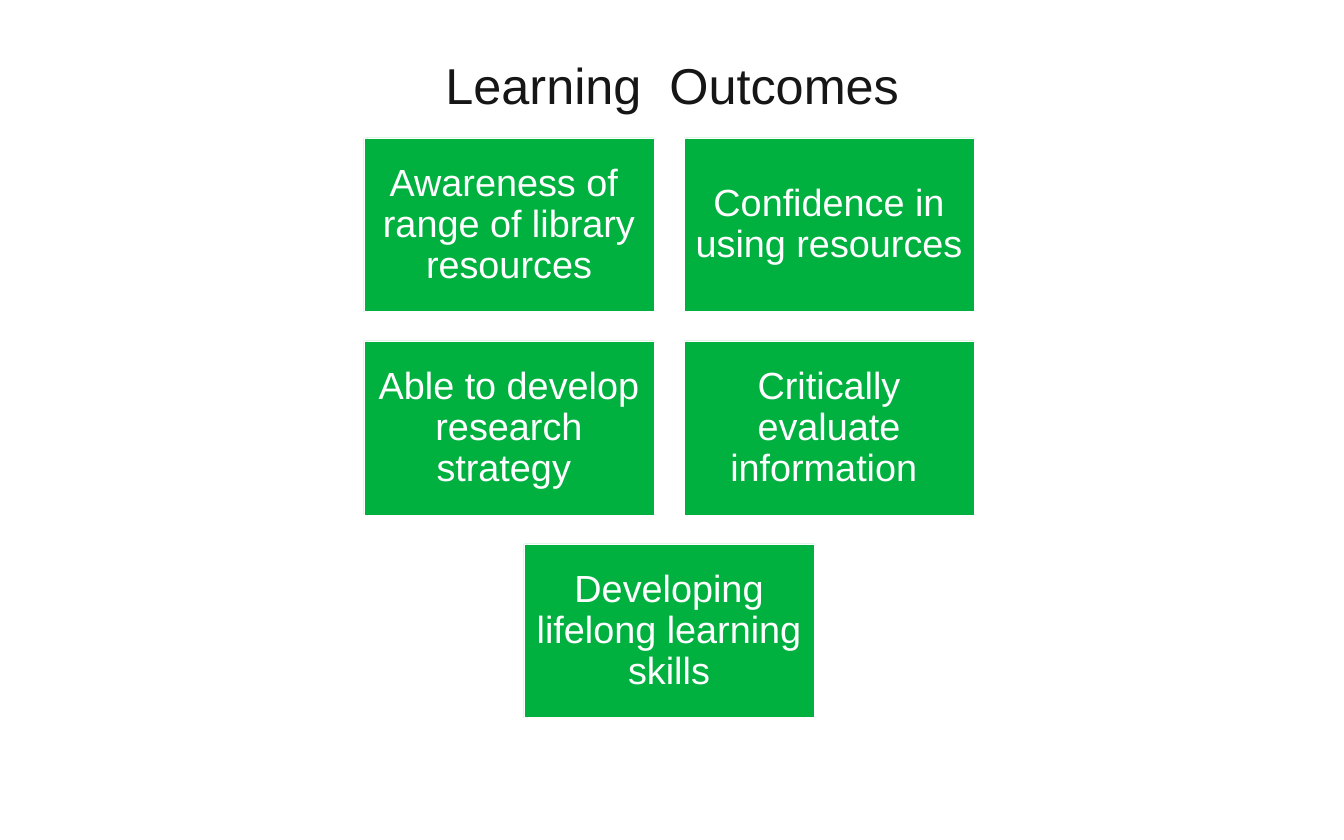
import dataclasses

import pptx
import pptx.dml.color
import pptx.enum.shapes
import pptx.enum.text
import pptx.util

PX = 12095  # EMU per px
FONT = "Arial"
HUES = {"green": "00B140", "white": "FFFFFF", "ink": "171616"}

# Card grid
WIDE, HIGH = 290, 174
LEFT, TOP = 364, 138
STEP_X, STEP_Y = 320, 203
INSET = 11


@dataclasses.dataclass
class Card:
    text: str
    col: float
    row: int


CARDS = [
    Card("Awareness of  range of library resources", 0, 0),
    Card("Confidence in using resources ", 1, 0),
    Card("Able to develop research strategy ", 0, 1),
    Card("Critically evaluate information ", 1, 1),
    Card("Developing lifelong learning skills", 0.5, 2),
]


def px(size: float) -> pptx.util.Emu:
    return pptx.util.Emu(round(size * PX))


def hue(name: str) -> pptx.dml.color.RGBColor:
    return pptx.dml.color.RGBColor.from_string(HUES[name])


def write(frame, text: str, size: int, tint: str) -> None:
    frame.text = text
    frame.word_wrap = True
    font = frame.paragraphs[0].runs[0].font
    font.name = FONT
    font.size = pptx.util.Pt(size)
    font.color.rgb = hue(tint)


def draw_card(slide, card: Card) -> None:
    box = slide.shapes.add_shape(
        pptx.enum.shapes.MSO_SHAPE.RECTANGLE,
        px(LEFT + card.col * STEP_X), px(TOP + card.row * STEP_Y),
        px(WIDE), px(HIGH))
    box.shadow.inherit = False
    box.fill.solid()
    box.fill.fore_color.rgb = hue("green")
    box.line.color.rgb = hue("white")
    box.line.width = pptx.util.Pt(0.85)
    frame = box.text_frame
    write(frame, card.text, 36, "white")
    frame.vertical_anchor = pptx.enum.text.MSO_ANCHOR.MIDDLE
    frame.margin_left = frame.margin_right = px(INSET)
    frame.margin_top = frame.margin_bottom = px(INSET)
    para = frame.paragraphs[0]
    para.alignment = pptx.enum.text.PP_ALIGN.CENTER
    para.line_spacing = 0.9


def draw_title(slide) -> None:
    box = slide.shapes.add_textbox(px(438), px(50), px(511), px(69))
    write(box.text_frame, "Learning  Outcomes", 48, "ink")
    box.text_frame.auto_size = pptx.enum.text.MSO_AUTO_SIZE.SHAPE_TO_FIT_TEXT


def main() -> None:
    deck = pptx.Presentation()
    deck.slide_width, deck.slide_height = px(1344), px(840)
    slide = deck.slides.add_slide(deck.slide_layouts[6])

    # Outcomes, then heading
    for card in CARDS:
        draw_card(slide, card)
    draw_title(slide)
    deck.save("out.pptx")


if __name__ == "__main__":
    main()
